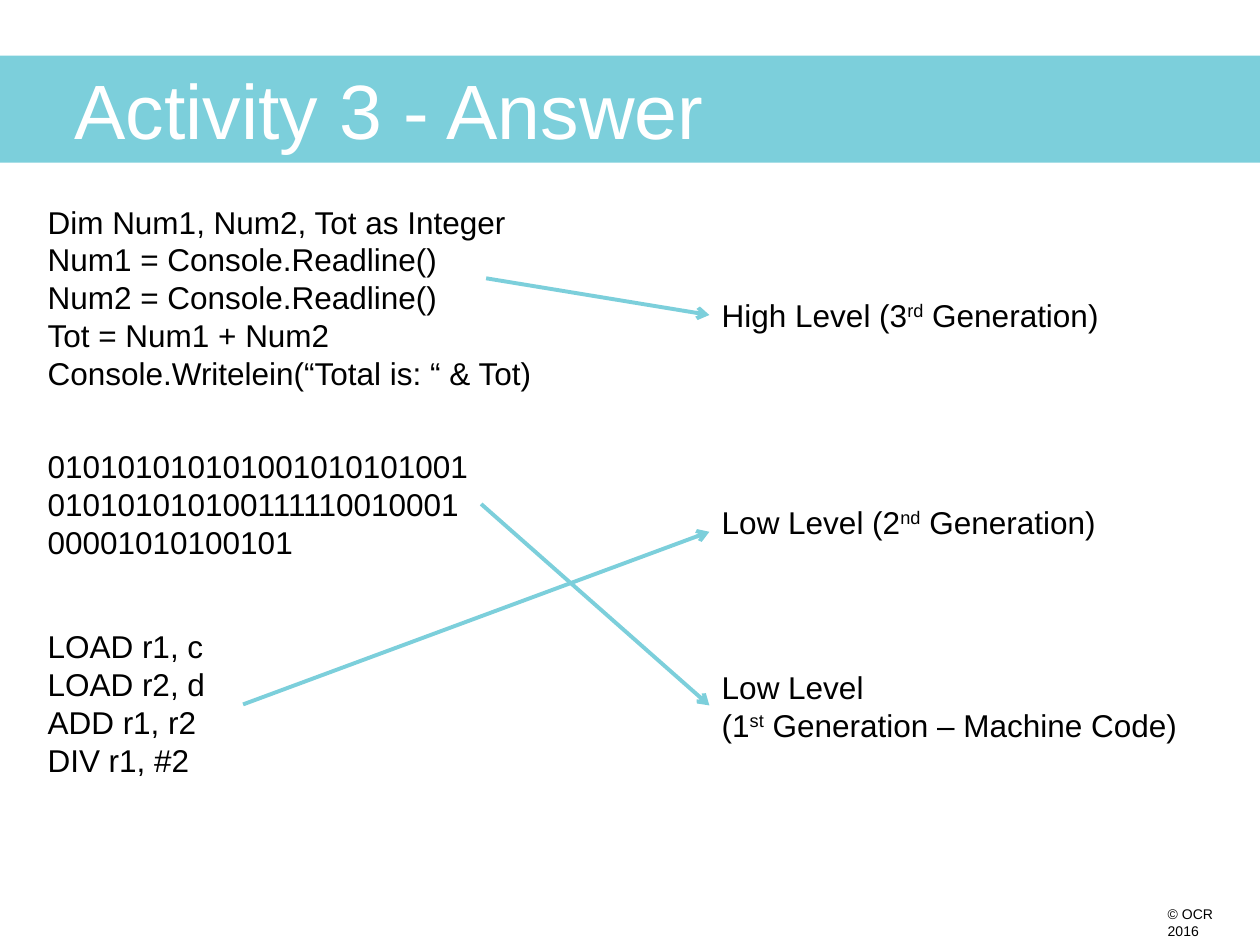
from pptx import Presentation
from pptx.dml.color import RGBColor
from pptx.enum.shapes import MSO_CONNECTOR
from pptx.enum.text import MSO_ANCHOR, MSO_AUTO_SIZE, PP_ALIGN
from pptx.oxml.ns import qn
from pptx.util import Cm, Pt
from lxml.etree import SubElement

TEAL = RGBColor(0x7C, 0xCF, 0xDB)
BLACK = RGBColor(0, 0, 0)
WHITE = RGBColor(255, 255, 255)

LEFT, RIGHT = 0.71, 14.3

VB_CODE = """Dim Num1, Num2, Tot as Integer
Num1 = Console.Readline()
Num2 = Console.Readline()
Tot = Num1 + Num2
Console.Writelein(“Total is: “ & Tot)"""
BINARY = "01010101010100101010100101010101010011111001000100001010100101"
ASSEMBLY = """LOAD r1, c
LOAD r2, d
ADD r1, r2
DIV r1, #2"""


def add_runs(p, text, size=18, color=BLACK):
    for i, part in enumerate(text.split("^")):
        r = p.add_run()
        r.text = part
        r.font.name = "Arial"
        r.font.size = Pt(size)
        r.font.color.rgb = color
        if i % 2:
            r.font._element.set("baseline", "30000")


def add_title(s, text):
    title = s.shapes.title
    title.left, title.top, title.width, title.height = Cm(0), Cm(1.12), Cm(25.4), Cm(2.16)
    title.fill.solid()
    title.fill.fore_color.rgb = TEAL
    tf = title.text_frame
    tf.auto_size = MSO_AUTO_SIZE.NONE
    tf.vertical_anchor = MSO_ANCHOR.MIDDLE
    p = tf.paragraphs[0]
    p.alignment = PP_ALIGN.LEFT
    pPr = p._p.get_or_add_pPr()
    pPr.set("marL", str(Cm(1.25)))
    pPr.set("indent", "0")
    add_runs(p, text, size=44, color=WHITE)


def add_text(s, text, x, y, w, h, size=18):
    tf = s.shapes.add_textbox(Cm(x), Cm(y), Cm(w), Cm(h)).text_frame
    tf.word_wrap = True
    for i, line in enumerate(text.split("\n")):
        p = tf.add_paragraph() if i else tf.paragraphs[0]
        add_runs(p, line, size=size)


def add_arrow(s, x1, y1, x2, y2):
    c = s.shapes.add_connector(MSO_CONNECTOR.STRAIGHT, Cm(x1), Cm(y1), Cm(x2), Cm(y2))
    c.line.color.rgb = TEAL
    c.line.width = Pt(2.25)
    SubElement(c.line._get_or_add_ln(), qn("a:tailEnd"), type="arrow")
    SubElement(c._element.spPr, qn("a:effectLst"))


def main():
    prs = Presentation()
    prs.slide_width, prs.slide_height = Cm(25.4), Cm(19.05)
    s = prs.slides.add_slide(prs.slide_layouts[5])
    add_title(s, "Activity 3 - Answer")

    for text, y, w, h in (
        (VB_CODE, 3.96, 10.39, 4.88),
        (BINARY, 8.89, 9, 2.57),
        (ASSEMBLY, 12.52, 9, 3.33),
    ):
        add_text(s, text, LEFT, y, w, h)

    for text, y, w, h in (
        ("High Level (3^rd^ Generation)", 5.84, 9.32, 1.02),
        ("Low Level (2^nd^ Generation)", 10.01, 9.32, 1.02),
        ("Low Level\n(1^st^ Generation – Machine Code)", 13.34, 9.8, 1.8),
    ):
        add_text(s, text, RIGHT, y, w, h)

    for x1, y1, y2 in ((9.7, 10.16, 14.22), (4.9, 14.2, 10.72), (9.8, 5.61, 6.35)):
        add_arrow(s, x1, y1, RIGHT, y2)

    add_text(s, "© OCR 2016", 23.29, 18.14, 2.11, 0.6, size=8)
    prs.save("out.pptx")


if __name__ == "__main__":
    main()
